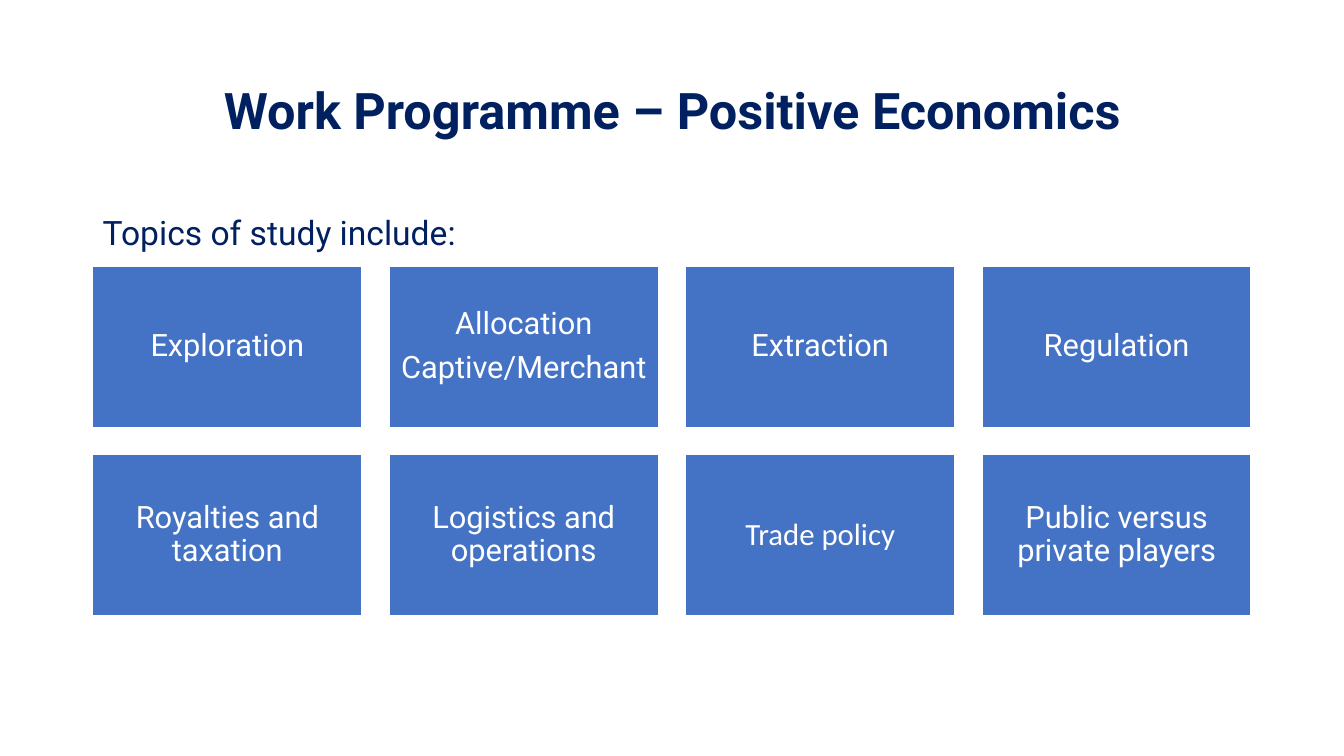
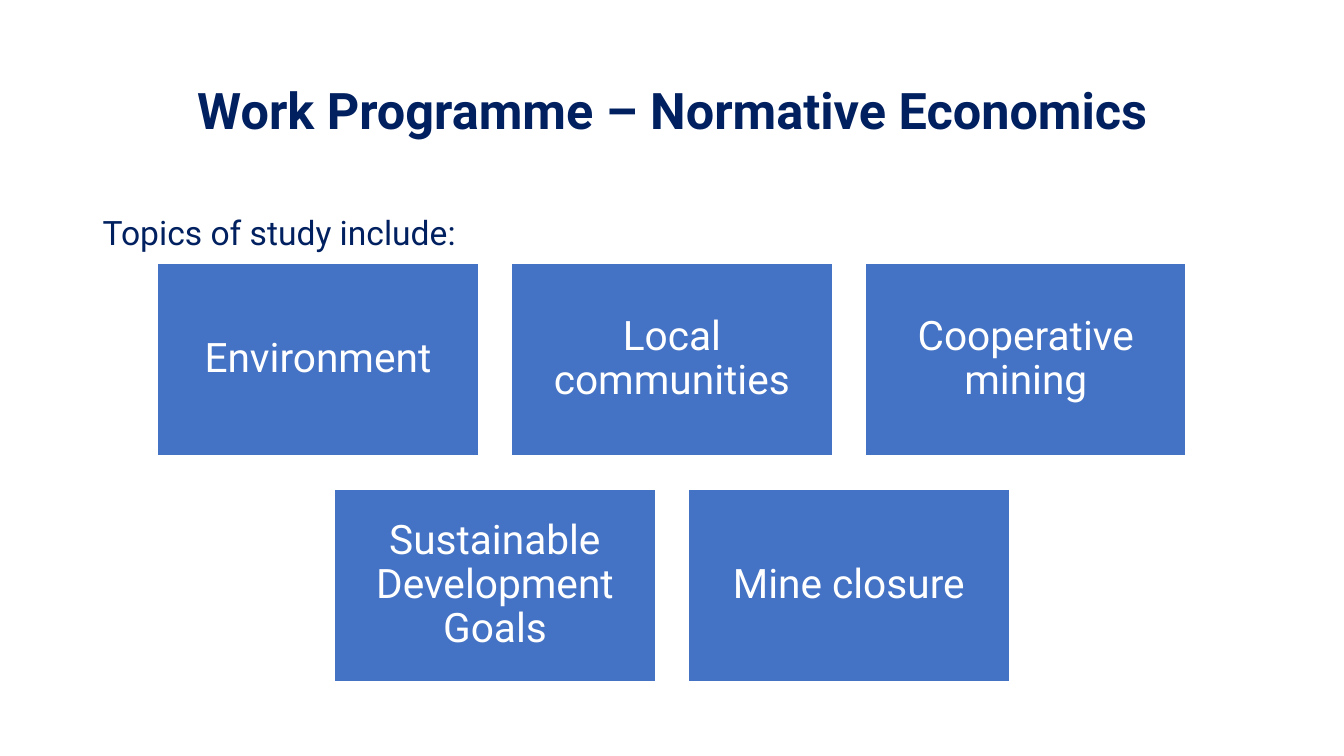
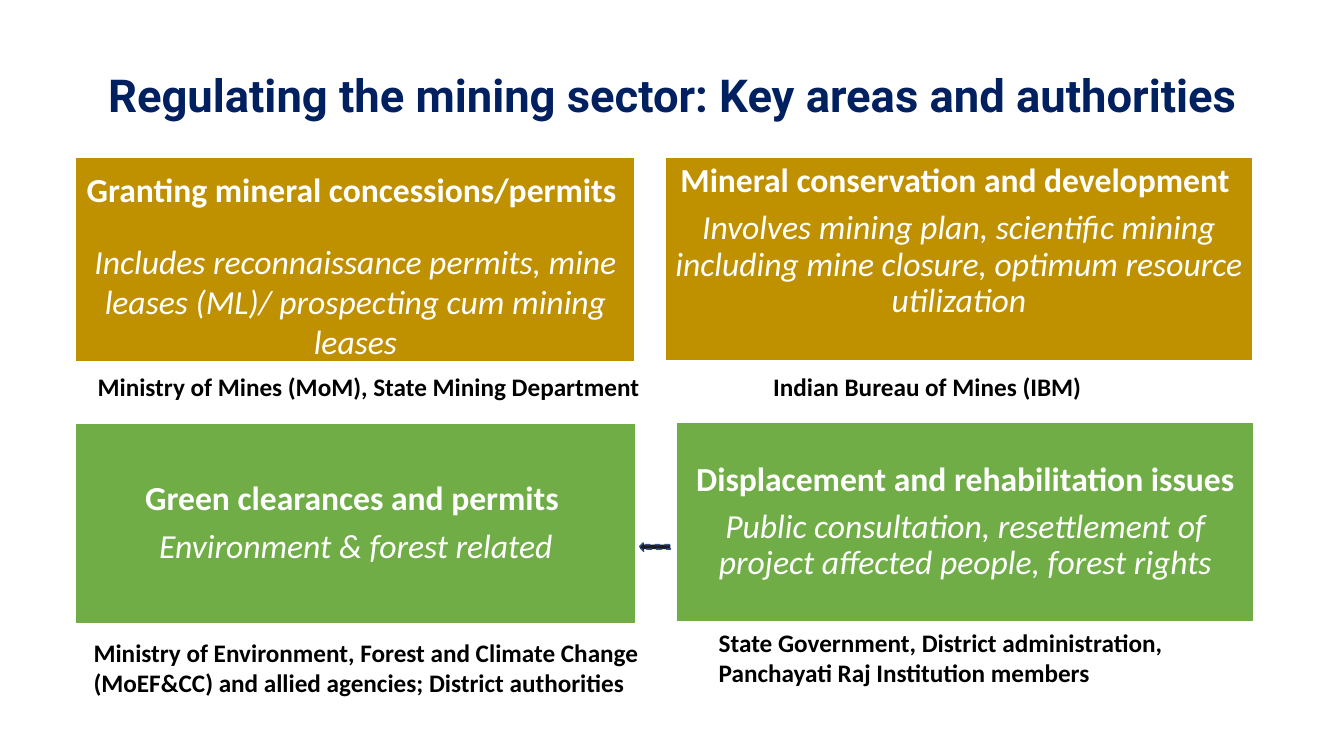
from dataclasses import dataclass

from lxml import etree
from pptx import Presentation
from pptx.dml.color import RGBColor
from pptx.enum.dml import MSO_LINE
from pptx.enum.shapes import MSO_SHAPE
from pptx.enum.text import MSO_ANCHOR, MSO_AUTO_SIZE, PP_ALIGN
from pptx.oxml.ns import qn
from pptx.util import Inches, Pt

LEFT, CENTER = PP_ALIGN.LEFT, PP_ALIGN.CENTER
TOP, MIDDLE = MSO_ANCHOR.TOP, MSO_ANCHOR.MIDDLE
RECT, ARROW = MSO_SHAPE.RECTANGLE, MSO_SHAPE.LEFT_ARROW
DASH = MSO_LINE.DASH
NO_FIT = MSO_AUTO_SIZE.NONE
TITLE_ONLY = 5


@dataclass(frozen=True)
class Theme:
    head: str = "Roboto"
    body: str = "Calibri"
    navy: str = "002060"
    blue: str = "4472C4"
    gold: str = "BF9000"
    green: str = "70AD47"
    edge: str = "325491"
    white: str = "FFFFFF"
    black: str = "000000"
    title: float = 36
    small: float = 32.4
    text: float = 24
    note: float = 18
    width: float = 13.33
    height: float = 7.5


T = Theme()


def rgb(code):
    return RGBColor.from_string(code)


# Text
def style(frame, size, color, font, align=LEFT, bold=False, space=1, after=0):
    """Format every paragraph of a frame alike."""
    frame.word_wrap = True
    for para in frame.paragraphs:
        para.alignment = align
        para.line_spacing = space
        para.space_before = Pt(0)
        para.space_after = Pt(after)
        for run in para.runs:
            run.font.size = Pt(size)
            run.font.name = font
            run.font.bold = bold
            run.font.color.rgb = rgb(color)


def add_text(slide, text, x, y, w, h, **look):
    box = slide.shapes.add_textbox(Inches(x), Inches(y), Inches(w), Inches(h))
    box.text_frame.text = text
    style(box.text_frame, **look)


def add_note(slide, text, x, y, w, h):
    add_text(slide, text, x, y, w, h, size=T.note, color=T.black,
             font=T.body, bold=True)


def add_slide(deck, title, size=T.title, tall=1.45):
    slide = deck.slides.add_slide(deck.slide_layouts[TITLE_ONLY])
    shape = slide.shapes.title
    shape.left, shape.top = Inches(0.92), Inches(0.4)
    shape.width, shape.height = Inches(11.5), Inches(tall)
    frame = shape.text_frame
    frame.text = title
    frame.auto_size = NO_FIT
    frame.vertical_anchor = MIDDLE
    style(frame, size, T.navy, T.head, CENTER, bold=True, space=0.9)
    return slide


# Boxes
def add_shape(slide, kind, x, y, w, h, fill, line):
    shape = slide.shapes.add_shape(
        kind, Inches(x), Inches(y), Inches(w), Inches(h))
    shape.shadow.inherit = False
    shape.fill.solid()
    shape.fill.fore_color.rgb = rgb(fill)
    shape.line.color.rgb = rgb(line)
    shape.line.width = Pt(1)
    return shape


def add_box(slide, text, x, y, w, h, fill, pad, **look):
    box = add_shape(slide, RECT, x, y, w, h, fill, T.white)
    frame = box.text_frame
    frame.text = text
    frame.vertical_anchor = MIDDLE
    frame.margin_left = frame.margin_right = Inches(pad)
    frame.margin_top = frame.margin_bottom = Inches(pad)
    style(frame, color=T.white, align=CENTER, **look)
    return frame


def add_grid(slide, rows, top, w, h, gap, size, pad, plain=()):
    """Rows of equal boxes, each row centred on the slide."""
    for i, row in enumerate(rows):
        start = (T.width - len(row) * (w + gap) + gap) / 2
        for j, text in enumerate(row):
            add_box(slide, text, start + j * (w + gap), top + i * (h + gap),
                    w, h, T.blue, pad, size=size, space=0.9, after=8,
                    font=T.body if text in plain else T.head)


def add_topics(deck, title, rows, **grid):
    slide = add_slide(deck, title)
    add_grid(slide, rows, **grid)
    add_text(slide, "Topics of study include:", 0.92, 1.85, 11.5, 0.61,
             size=T.text, color=T.navy, font=T.head, space=1.5)


def add_card(slide, head, detail, place, fill, space=0.9, after=8, inset=None):
    """Bold heading over an italic detail; an inset hangs them from the top."""
    frame = add_box(slide, f"{head}\n{detail}", *place, fill, 0.1,
                    size=T.text, font=T.body, bold=True, space=space,
                    after=after)
    if inset is not None:
        frame.vertical_anchor = TOP
        frame.margin_top = Inches(inset)
    font = frame.paragraphs[1].runs[0].font
    font.bold, font.italic = False, True


def add_arrow(slide, x, y, w, h):
    arrow = add_shape(slide, ARROW, x, y, w, h, T.black, T.edge)
    arrow.line.dash_style = DASH
    color = arrow.fill._xPr.find(qn("a:solidFill")).find(qn("a:srgbClr"))
    etree.SubElement(color, qn("a:alpha")).set("val", "89000")


# Slides
def add_rules(deck):
    slide = add_slide(
        deck, "Regulating the mining sector: Key areas and authorities",
        T.small, 1.14)
    add_card(slide, "Mineral conservation and development ",
             "Involves mining plan, scientific mining including mine closure, "
             "optimum resource utilization",
             (6.6, 1.56, 5.82, 2.02), T.gold, inset=0.06)
    add_card(slide, "Granting mineral concessions/permits ",
             "Includes reconnaissance permits, mine leases (ML)/ prospecting "
             "cum mining leases",
             (0.75, 1.56, 5.55, 2.03), T.gold, space=1, after=22, inset=0.12)
    add_card(slide, "Green clearances and permits ",
             "Environment & forest related",
             (0.75, 4.2, 5.56, 1.99), T.green)
    add_card(slide, "Displacement and rehabilitation issues",
             "Public consultation, resettlement of project affected people, "
             "forest rights",
             (6.71, 4.19, 5.73, 1.98), T.green)
    add_arrow(slide, 6.34, 5.38, 0.31, 0.09)
    add_note(slide, "Ministry of Mines (MoM), State Mining Department",
             0.87, 3.63, 5.63, 0.4)
    add_note(slide, "Indian Bureau of Mines (IBM)", 7.57, 3.63, 4.4, 0.4)
    add_note(slide, "Ministry of Environment, Forest and Climate Change "
             "(MoEF&CC) and allied agencies; District authorities",
             0.83, 6.27, 5.64, 0.71)
    add_note(slide, "State Government, District administration, "
             "Panchayati Raj Institution members", 7.03, 6.17, 5.48, 0.71)


def main():
    deck = Presentation()
    deck.slide_width, deck.slide_height = Inches(T.width), Inches(T.height)
    add_topics(
        deck, "Work Programme – Positive Economics",
        [["Exploration", "Allocation\nCaptive/Merchant", "Extraction",
          "Regulation"],
         ["Royalties and taxation", "Logistics and operations",
          "Trade policy", "Public versus private players"]],
        top=2.64, w=2.67, h=1.6, gap=0.27, size=22, pad=0.09,
        plain=["Trade policy"])
    add_topics(
        deck, "Work Programme – Normative Economics",
        [["Environment", "Local communities", "Cooperative mining"],
         ["Sustainable Development Goals", "Mine closure"]],
        top=2.61, w=3.18, h=1.91, gap=0.33, size=29, pad=0.12)
    add_rules(deck)
    deck.save("out.pptx")


if __name__ == "__main__":
    main()
